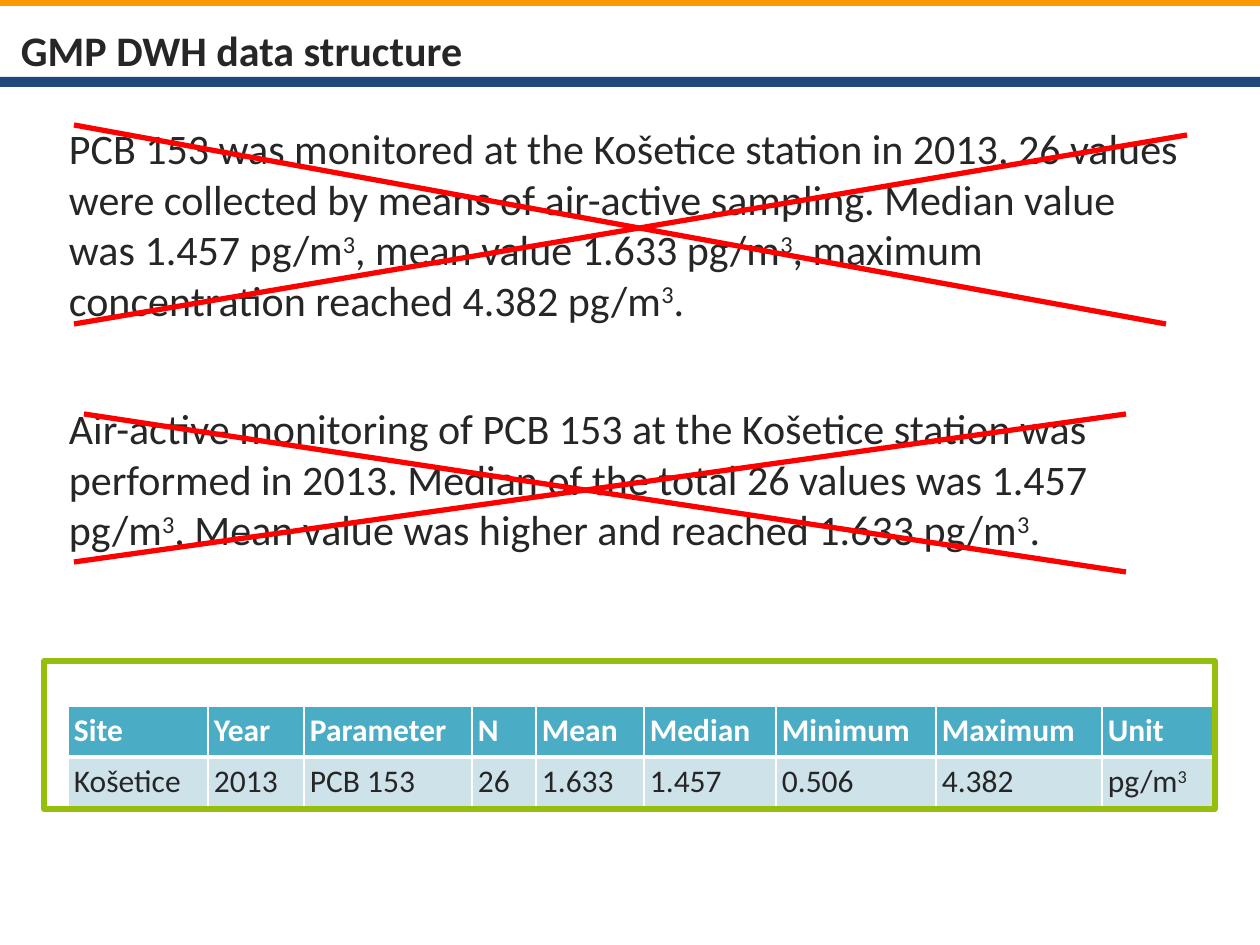
"""Build the GMP DWH data structure slide."""
from dataclasses import dataclass

from lxml import etree
from pptx import Presentation
from pptx.dml.color import RGBColor
from pptx.enum.shapes import MSO_CONNECTOR, MSO_SHAPE
from pptx.enum.text import MSO_ANCHOR
from pptx.oxml.ns import qn
from pptx.util import Emu, Pt

RECT = MSO_SHAPE.RECTANGLE
STRAIGHT = MSO_CONNECTOR.STRAIGHT
TOP, MIDDLE = MSO_ANCHOR.TOP, MSO_ANCHOR.MIDDLE
PX_PER_INCH = 126


@dataclass(frozen=True)
class Theme:
    font: str = "Calibri"
    text: str = "262626"
    white: str = "FFFFFF"
    orange: str = "FF9900"
    navy: str = "1F497D"
    red: str = "FF0000"
    green: str = "96BE0D"
    head: str = "4BACC6"
    band: str = "CEE2EA"
    body_size: int = 24
    table_size: int = 18
    mark_width: int = 3


@dataclass(frozen=True)
class Box:
    x: int
    y: int
    w: int
    h: int


@dataclass(frozen=True)
class Block:
    box: Box
    text: str
    bold: bool = False
    anchor: MSO_ANCHOR = TOP


@dataclass(frozen=True)
class Stroke:
    x1: int
    y1: int
    x2: int
    y2: int


THEME = Theme()
INSET = 6
BARS = [
    (Box(0, -9, 1260, 15), THEME.orange),
    (Box(0, 77, 1260, 10), THEME.navy),
]
BLOCKS = [
    Block(Box(15, 11, 636, 77), "GMP DWH data structure", True, MIDDLE),
    Block(
        Box(63, 117, 1134, 217),
        "PCB 153 was monitored at the Košetice station in 2013. 26 values were "
        "collected by means of air-active sampling. Median value was 1.457 pg/m^3^, "
        "mean value 1.633 pg/m^3^, maximum concentration reached 4.382 pg/m^3^.",
    ),
    Block(
        Box(63, 397, 1134, 165),
        "Air-active monitoring of PCB 153 at the Košetice station was performed in "
        "2013. Median of the total 26 values was 1.457 pg/m^3^. Mean value was "
        "higher and reached 1.633 pg/m^3^.",
    ),
]
STROKES = [
    Stroke(74, 125, 1166, 324),
    Stroke(74, 324, 1187, 135),
    Stroke(84, 414, 1126, 572),
    Stroke(74, 562, 1126, 414),
]
FRAME = Box(44, 661, 1171, 148)
TABLE = Box(68, 706, 1148, 102)
COLUMNS = [140, 96, 168, 64, 108, 132, 160, 166, 114]
ROWS = [
    ["Site", "Year", "Parameter", "N", "Mean", "Median", "Minimum", "Maximum", "Unit"],
    ["Košetice", "2013", "PCB 153", "26", "1.633", "1.457", "0.506", "4.382", "pg/m^3^"],
]


def px(n: int) -> Emu:
    return Emu(round(n * 914400 / PX_PER_INCH))


def place(box: Box) -> tuple[Emu, ...]:
    return px(box.x), px(box.y), px(box.w), px(box.h)


def rgb(color: str) -> RGBColor:
    return RGBColor.from_string(color)


def write(tf, text: str, *, size: int, color: str = THEME.text, bold: bool = False) -> None:
    p = tf.paragraphs[0]
    for i, part in enumerate(text.split("^")):
        if not part:
            continue
        r = p.add_run()
        r.text = part
        r.font.name = THEME.font
        r.font.size = Pt(size)
        r.font.bold = bold
        r.font.color.rgb = rgb(color)
        if i % 2:
            r._r.get_or_add_rPr().set("baseline", "30000")


def set_insets(obj) -> None:
    obj.margin_left = obj.margin_right = px(INSET)
    obj.margin_top = obj.margin_bottom = px(INSET)


def add_rect(s, box: Box, fill: str | None = None, line: str | None = None) -> None:
    sp = s.shapes.add_shape(RECT, *place(box))
    sp.shadow.inherit = False
    if fill:
        sp.fill.solid()
        sp.fill.fore_color.rgb = rgb(fill)
    else:
        sp.fill.background()
    if line:
        sp.line.color.rgb = rgb(line)
        sp.line.width = Pt(THEME.mark_width)
    else:
        sp.line.fill.background()


def add_block(s, block: Block) -> None:
    tf = s.shapes.add_textbox(*place(block.box)).text_frame
    tf.word_wrap = True
    tf.vertical_anchor = block.anchor
    set_insets(tf)
    write(tf, block.text, size=THEME.body_size, bold=block.bold)


def add_stroke(s, stroke: Stroke) -> None:
    ends = (px(n) for n in (stroke.x1, stroke.y1, stroke.x2, stroke.y2))
    sp = s.shapes.add_connector(STRAIGHT, *ends)
    sp.line.color.rgb = rgb(THEME.red)
    sp.line.width = Pt(THEME.mark_width)
    etree.SubElement(sp._element.spPr, qn("a:effectLst"))


def add_borders(cell, widths: dict[str, int]) -> None:
    tc_pr = cell._tc.get_or_add_tcPr()
    for side, width in widths.items():
        ln = etree.SubElement(tc_pr, qn(f"a:ln{side}"), w=str(Pt(width)))
        fill = etree.SubElement(ln, qn("a:solidFill"))
        etree.SubElement(fill, qn("a:srgbClr"), val=THEME.white)


def add_table(s) -> None:
    table = s.shapes.add_table(len(ROWS), len(COLUMNS), *place(TABLE)).table
    for col, width in zip(table.columns, COLUMNS):
        col.width = px(width)
    for i, row in enumerate(ROWS):
        table.rows[i].height = px(TABLE.h // len(ROWS))
        header = i == 0
        for j, text in enumerate(row):
            cell = table.cell(i, j)
            set_insets(cell)
            add_borders(cell, {"L": 1, "R": 1, "T": 1 if header else 3, "B": 3 if header else 1})
            cell.fill.solid()
            cell.fill.fore_color.rgb = rgb(THEME.head if header else THEME.band)
            color = THEME.white if header else THEME.text
            write(cell.text_frame, text, size=THEME.table_size, color=color, bold=header)


def main() -> None:
    prs = Presentation()
    prs.slide_width, prs.slide_height = px(1260), px(945)
    s = prs.slides.add_slide(prs.slide_layouts[6])
    for box, color in BARS:
        add_rect(s, box, fill=color)
    for block in BLOCKS:
        add_block(s, block)
    add_table(s)
    for stroke in STROKES:
        add_stroke(s, stroke)
    add_rect(s, FRAME, line=THEME.green)
    prs.save("out.pptx")


if __name__ == "__main__":
    main()
